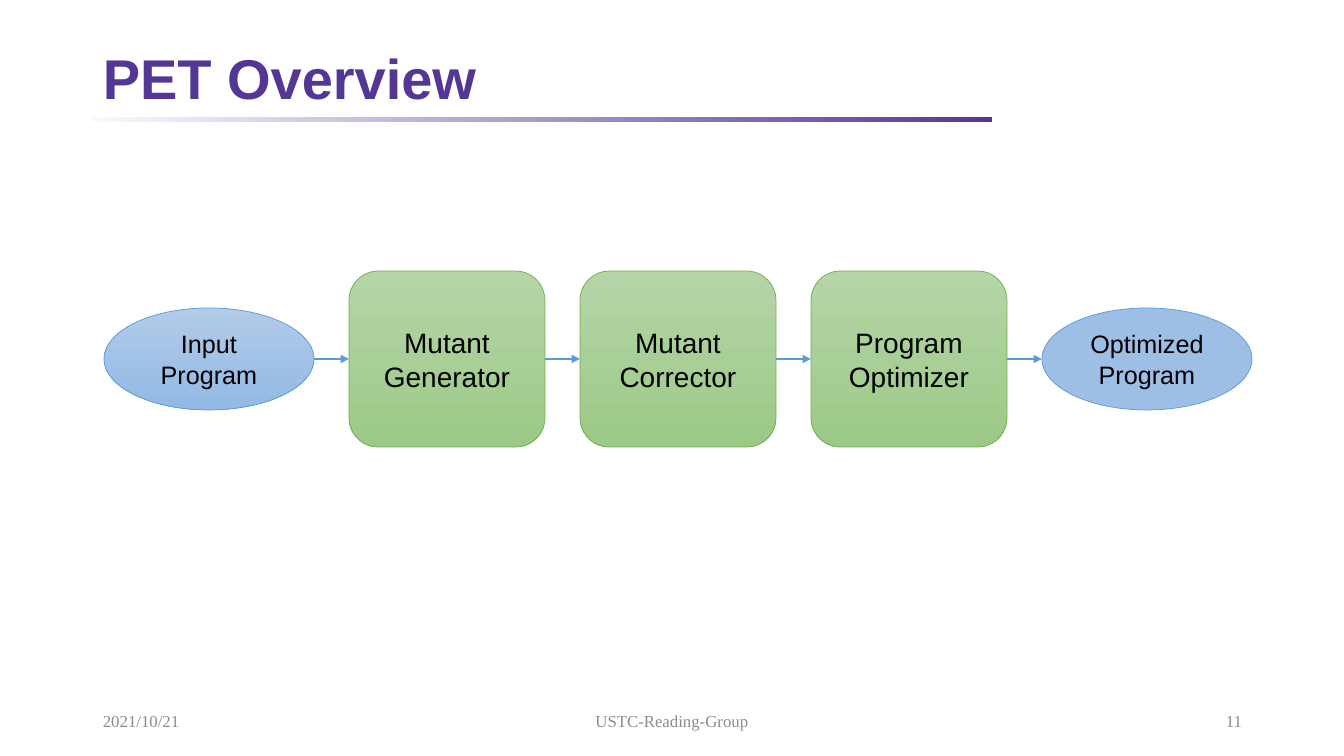
from lxml import etree
from pptx import Presentation
from pptx import util as u
from pptx.dml.color import RGBColor
from pptx.enum import shapes, text
from pptx.oxml.ns import qn

HUES = {
    "title": "543795", "fade": "F7FAFD", "foot": "8C8C8C", "ink": "000000",
    "blue": "5B9BD5", "sky": "B1CBE9", "deep": "93B9E4", "flat": "9EBFE5",
    "green": "70AD47", "pale": "B5D5A7", "leaf": "9CC987",
}
KIND = shapes.MSO_SHAPE
ALIGN = text.PP_ALIGN


def px(n):
    return u.Emu(round(n * 9144000 / 1008))


def hue(name):
    return RGBColor.from_string(HUES[name])


def write(frame, lines, size, color, align, font="Arial", bold=False):
    frame.word_wrap = True
    frame.vertical_anchor = text.MSO_ANCHOR.MIDDLE
    for i, line in enumerate(lines):
        para = frame.paragraphs[0] if i == 0 else frame.add_paragraph()
        para.alignment = align
        run = para.add_run()
        run.text = line
        run.font.size = u.Pt(size)
        run.font.name = font
        run.font.bold = bold
        run.font.color.rgb = hue(color)


def label(slide, box, words, size, color, align, **style):
    frame = slide.shapes.add_textbox(*map(px, box)).text_frame
    write(frame, [words], size, color, align, **style)
    return frame


def block(slide, kind, box, fills, angle=270, edge=None):
    shape = slide.shapes.add_shape(kind, *map(px, box))
    shape.shadow.inherit = False
    if len(fills) == 1:
        shape.fill.solid()
        shape.fill.fore_color.rgb = hue(fills[0])
    else:
        shape.fill.gradient()
        shape.fill.gradient_angle = angle
        for stop, name in zip(shape.fill.gradient_stops, fills):
            stop.color.rgb = hue(name)
    if edge:
        shape.line.color.rgb = hue(edge)
        shape.line.width = u.Pt(0.5)
    else:
        shape.line.fill.background()
    return shape


def arrow(slide, start, end):
    mid = start.top + start.height // 2
    line = slide.shapes.add_connector(
        shapes.MSO_CONNECTOR.STRAIGHT, start.left + start.width, mid, end.left, mid)
    if start.auto_shape_type == KIND.ROUNDED_RECTANGLE:
        line.begin_connect(start, 3)
    if end.auto_shape_type == KIND.ROUNDED_RECTANGLE:
        line.end_connect(end, 1)
    line.line.color.rgb = hue("blue")
    line.line.width = u.Pt(1.5)
    props = line._element.spPr
    etree.SubElement(props.find(qn("a:ln")), qn("a:tailEnd"), type="triangle")
    etree.SubElement(props, qn("a:effectLst"))


def header(slide, box):
    x, y, w, h = box
    block(slide, KIND.RECTANGLE, (x, y + 74, 899, 5), ["fade", "title"], angle=0)
    frame = label(slide, box, "PET Overview", 40, "title", ALIGN.LEFT, bold=True)
    frame.paragraphs[0].line_spacing = 0.9


def footer(slide, box):
    x, y, w, h = box
    side, mid = 302, 454
    parts = [
        (x, side, "2021/10/21", ALIGN.LEFT),
        (x + (w - mid) // 2, mid, "USTC-Reading-Group", ALIGN.CENTER),
        (x + w - side, side, "11", ALIGN.RIGHT),
    ]
    for left, wide, words, align in parts:
        label(slide, (left, y, wide, h), words, 12, "foot", align,
              font="Times New Roman")


def flow(slide, box):
    x, y, w, h = box
    oval = (KIND.OVAL, 210, 102, 18, "blue")
    step = (KIND.ROUNDED_RECTANGLE, 196, 176, 20, "green")
    leaf = ["pale", "leaf"]
    nodes = [
        (oval, ["sky", "deep"], ["Input Program"]),
        (step, leaf, ["Mutant", "Generator"]),
        (step, leaf, ["Mutant", "Corrector"]),
        (step, leaf, ["Program", "Optimizer"]),
        (oval, ["flat"], ["Optimized", "Program"]),
    ]
    gap = (w - sum(node[0][1] for node in nodes)) // (len(nodes) - 1)
    made = []
    for (kind, wide, high, size, edge), fills, lines in nodes:
        place = (x, y + (h - high) // 2, wide, high)
        shape = block(slide, kind, place, fills, edge=edge)
        write(shape.text_frame, lines, size, "ink", ALIGN.CENTER)
        made.append(shape)
        x += wide + gap
    for start, end in zip(made, made[1:]):
        arrow(slide, start, end)


def main():
    deck = Presentation()
    deck.slide_width, deck.slide_height = px(1344), px(756)
    slide = deck.slides.add_slide(deck.slide_layouts[6])
    header(slide, (93, 43, 1159, 76))
    footer(slide, (93, 701, 1159, 40))
    flow(slide, (104, 271, 1148, 176))
    deck.save("out.pptx")


if __name__ == "__main__":
    main()
